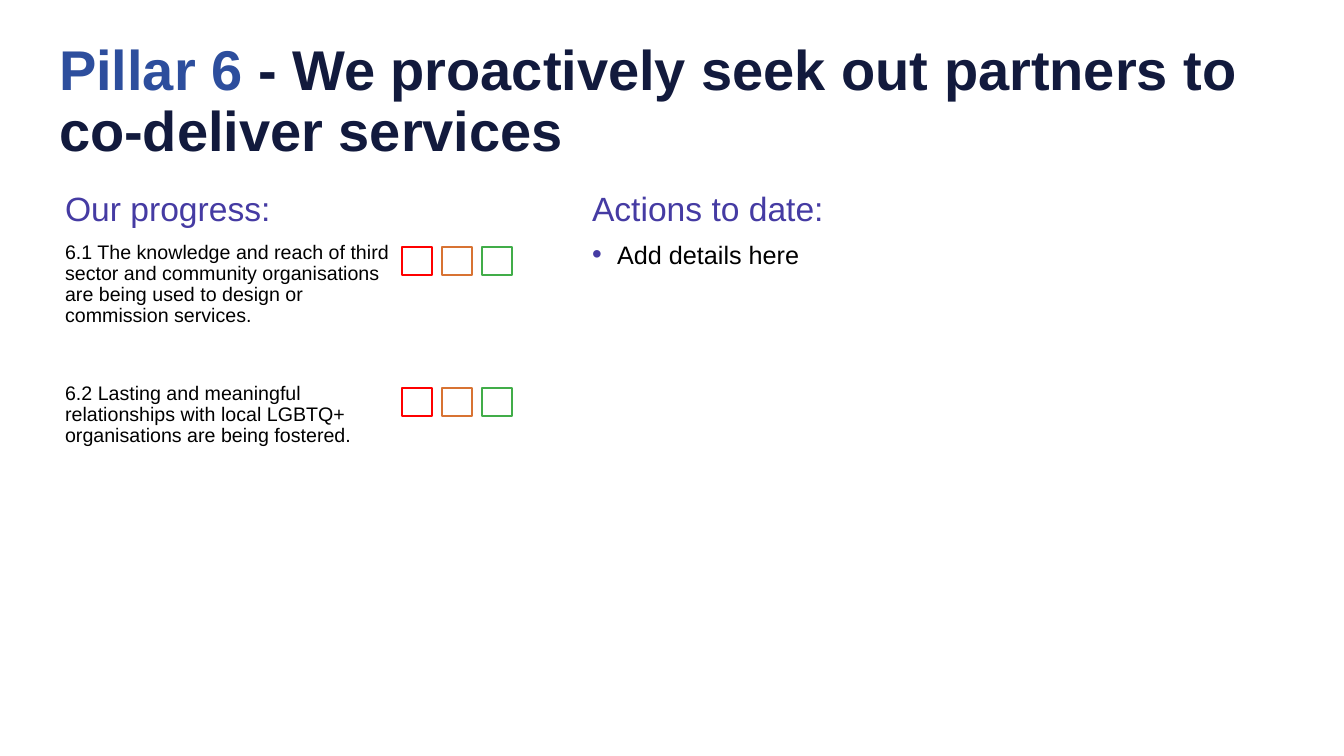
from lxml import etree
from pptx import Presentation
from pptx import util as u
from pptx.dml.color import RGBColor
from pptx.enum import shapes, text
from pptx.oxml.ns import qn

SCALE = 914400 / 100.8
FONT = "Arial"
PURPLE, BLACK = "453BA3", "000000"

TITLE = [("Pillar 6 ", "2D4E9D"),
         ("- We proactively seek out partners to co-deliver services", "121A3D")]
TITLE_AREA = (49, 30, 1218, 146)

PROGRESS_AREA = (55, 187, 472, 499)
PROGRESS = [
    ("Our progress:", 24, PURPLE, 10, None),
    ("6.1 The knowledge and reach of third\nsector and community organisations\n"
     "are being used to design or\ncommission services.", 14, BLACK, 10, None),
    ("6.2 Lasting and meaningful\nrelationships with local LGBTQ+\n"
     "organisations are being fostered.", 14, BLACK, 40, None),
]

ACTIONS_AREA = (582, 187, 665, 499)
ACTIONS = [
    ("Actions to date:", 24, PURPLE, 10, None),
    ("Add details here", 18, BLACK, 10, "•"),
]

RATING_COLOURS = ["FF0000", "D87333", "41AD49"]
RATING_TOPS = [247, 388]
RATING_LEFT, RATING_STEP, RATING_WIDTH, RATING_HEIGHT = 402, 40, 30, 28


def px(length):
    return u.Emu(round(length * SCALE))


def colour(value):
    return RGBColor.from_string(value)


def place(shape, area, anchor):
    shape.left, shape.top, shape.width, shape.height = map(px, area)
    frame = shape.text_frame
    frame.word_wrap = True
    frame.auto_size = text.MSO_AUTO_SIZE.NONE
    frame.vertical_anchor = anchor
    return frame


def set_bullet(paragraph, bullet):
    properties = paragraph._p.get_or_add_pPr()
    indent = px(25) if bullet else 0
    properties.set("marL", str(indent))
    properties.set("indent", str(-indent))
    if not bullet:
        etree.SubElement(properties, qn("a:buNone"))
        return
    bullet_colour = etree.SubElement(properties, qn("a:buClr"))
    etree.SubElement(bullet_colour, qn("a:srgbClr"), val=PURPLE)
    etree.SubElement(properties, qn("a:buSzPct"), val="110000")
    etree.SubElement(properties, qn("a:buFont"), typeface=FONT)
    etree.SubElement(properties, qn("a:buChar"), char=bullet)


def fill_body(shape, area, lines):
    frame = place(shape, area, text.MSO_ANCHOR.TOP)
    for index, (wording, size, hex_colour, space, bullet) in enumerate(lines):
        paragraph = frame.add_paragraph() if index else frame.paragraphs[0]
        paragraph.text = wording
        paragraph.alignment = text.PP_ALIGN.LEFT
        paragraph.line_spacing = 0.9
        paragraph.space_before = u.Pt(space)
        set_bullet(paragraph, bullet)
        paragraph.font.name = FONT
        paragraph.font.size = u.Pt(size)
        paragraph.font.color.rgb = colour(hex_colour)


def fill_title(shape):
    paragraph = place(shape, TITLE_AREA, text.MSO_ANCHOR.MIDDLE).paragraphs[0]
    paragraph.alignment = text.PP_ALIGN.LEFT
    paragraph.line_spacing = 0.9
    paragraph.space_before = u.Pt(0)
    paragraph.font.name = FONT
    paragraph.font.size = u.Pt(40)
    paragraph.font.bold = True
    for wording, hex_colour in TITLE:
        run = paragraph.add_run()
        run.text = wording
        run.font.color.rgb = colour(hex_colour)


def add_rating_boxes(slide):
    for top in RATING_TOPS:
        for column, hex_colour in enumerate(RATING_COLOURS):
            left = RATING_LEFT + column * RATING_STEP
            box = slide.shapes.add_shape(
                shapes.MSO_SHAPE.RECTANGLE,
                px(left), px(top), px(RATING_WIDTH), px(RATING_HEIGHT))
            box.shadow.inherit = False
            box.fill.background()
            box.line.color.rgb = colour(hex_colour)
            box.line.width = u.Pt(1.5)


def main():
    presentation = Presentation()
    presentation.slide_width, presentation.slide_height = px(1344), px(756)
    slide = presentation.slides.add_slide(presentation.slide_layouts[3])
    title, progress, actions = list(slide.placeholders)[:3]
    fill_title(title)
    fill_body(progress, PROGRESS_AREA, PROGRESS)
    fill_body(actions, ACTIONS_AREA, ACTIONS)
    add_rating_boxes(slide)
    presentation.save("out.pptx")


if __name__ == "__main__":
    main()
